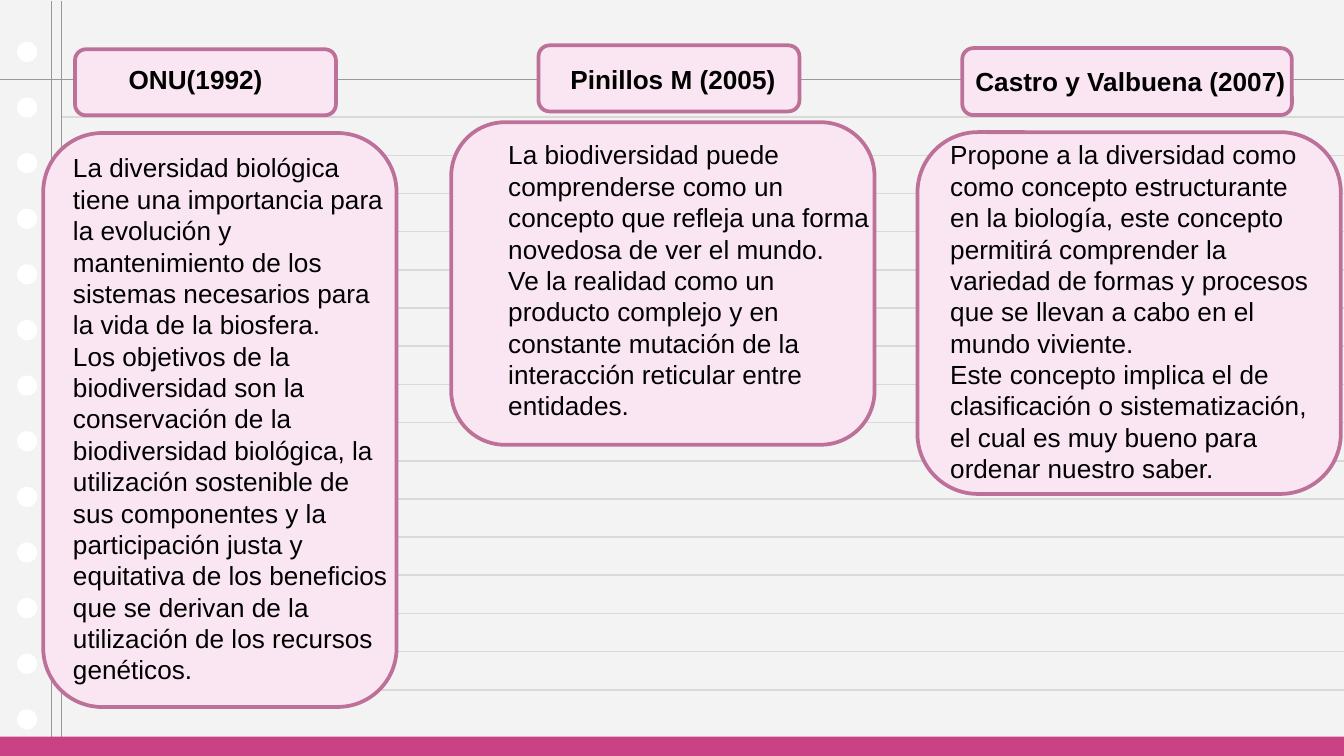
from pptx import Presentation
from pptx.dml.color import RGBColor
from pptx.enum.shapes import MSO_CONNECTOR, MSO_SHAPE
from pptx.enum.text import MSO_AUTO_SIZE
from pptx.oxml.ns import qn
from pptx.util import Pt
from lxml.etree import SubElement

COLORS = {
    "paper": "F3F3F3",
    "hole": "FFFFFF",
    "rule": "D9D9D9",
    "margin": "999999",
    "footer": "C94284",
    "card": "FAE6F2",
    "border": "BD7199",
    "text": "000000",
}
WIDTH, HEIGHT = 720, 405

# Each column: card and text areas as left, top, width, height
COLUMNS = [
    {
        "heading": "ONU(1992)",
        "heading_card": (40.2, 26.4, 139.8, 35.4),
        "heading_text": (61.8, 30.3, 96, 24.3),
        "body_card": (23.2, 71.3, 189.3, 307.5),
        "body_text": (32, 77.8, 186.5, 296),
        "body": [
            "La diversidad biológica tiene una importancia para la evolución y mantenimiento "
            "de los sistemas necesarios para la vida de la biosfera.",
            "Los objetivos de la biodiversidad son la conservación de la biodiversidad biológica, "
            "la utilización sostenible de sus componentes y la participación justa y equitativa "
            "de los beneficios que se derivan de la utilización de los recursos genéticos.",
        ],
    },
    {
        "heading": "Pinillos M (2005)",
        "heading_card": (288.5, 24.3, 139.8, 35.4),
        "heading_text": (298.5, 30.3, 133, 24.3),
        "body_card": (241.7, 65.5, 226.8, 172.8),
        "body_text": (265.2, 70.8, 213.8, 160),
        "body": [
            "La biodiversidad puede comprenderse como un concepto que refleja una forma "
            "novedosa de ver el mundo.",
            "Ve la realidad como un producto complejo y en constante mutación de la "
            "interacción reticular entre entidades.",
        ],
    },
    {
        "heading": "Castro y Valbuena (2007)",
        "heading_card": (515.5, 25.8, 176.6, 35.9),
        "heading_text": (515.4, 31.5, 187, 24.3),
        "body_card": (491.5, 70.8, 226.8, 193.8),
        "body_text": (502, 70.8, 213.8, 193.8),
        "body": [
            "Propone a la diversidad como como concepto estructurante en la biología, este "
            "concepto permitirá comprender la variedad de formas y procesos que se llevan a "
            "cabo en el mundo viviente.",
            "Este concepto implica el de clasificación o sistematización, el cual es muy "
            "bueno para ordenar nuestro saber.",
        ],
    },
]

deck = Presentation()
deck.slide_width, deck.slide_height = Pt(WIDTH), Pt(HEIGHT)
page = deck.slides.add_slide(deck.slide_layouts[6])
page.background.fill.solid()
page.background.fill.fore_color.rgb = RGBColor.from_string(COLORS["paper"])


def add_filled(kind, area, fill, border=None):
    shape = page.shapes.add_shape(kind, *map(Pt, area))
    shape.shadow.inherit = False
    shape.fill.solid()
    shape.fill.fore_color.rgb = RGBColor.from_string(COLORS[fill])
    if border:
        shape.line.color.rgb = RGBColor.from_string(COLORS[border])
        shape.line.width = Pt(2)
    else:
        shape.line.fill.background()


def add_text(area, paragraphs, bold):
    box = page.shapes.add_textbox(*map(Pt, area))
    frame = box.text_frame
    frame.word_wrap = True
    frame.auto_size = MSO_AUTO_SIZE.SHAPE_TO_FIT_TEXT
    frame.text = "\n".join(paragraphs)
    for para in frame.paragraphs:
        for span in para.runs:
            span.font.name = "Arial"
            span.font.size = Pt(14)
            span.font.bold = bold
            span.font.color.rgb = RGBColor.from_string(COLORS["text"])


# Notebook paper: punched holes, ruled lines, margin lines and footer band
for index in range(13):
    add_filled(MSO_SHAPE.OVAL, (9.1, 22.4 + 29.8 * index, 10.8, 10.8), "hole")

paper_lines = [((32.8, y), (WIDTH, y), "rule", 0.86)
               for y in (62.8 + 20.45 * index for index in range(16))]
paper_lines += [((x, 0.7), (x, HEIGHT), "margin", 0.62) for x in (27.8, 32.8)]
paper_lines.append(((-5, 42.5), (WIDTH + 5, 42.5), "margin", 0.75))
for start, end, color, weight in paper_lines:
    line = page.shapes.add_connector(MSO_CONNECTOR.STRAIGHT, *map(Pt, start + end))
    line.line.color.rgb = RGBColor.from_string(COLORS[color])
    line.line.width = Pt(weight)
    SubElement(line._element.spPr, qn("a:effectLst"))

add_filled(MSO_SHAPE.RECTANGLE, (-1.4, 394.7, WIDTH + 1.4, 12.2), "footer")

# One heading card and one body card per author
for column in COLUMNS:
    for part in ("heading", "body"):
        add_filled(MSO_SHAPE.ROUNDED_RECTANGLE, column[part + "_card"], "card", "border")
    add_text(column["heading_text"], [column["heading"]], bold=True)
    add_text(column["body_text"], column["body"], bold=False)

deck.save("out.pptx")
